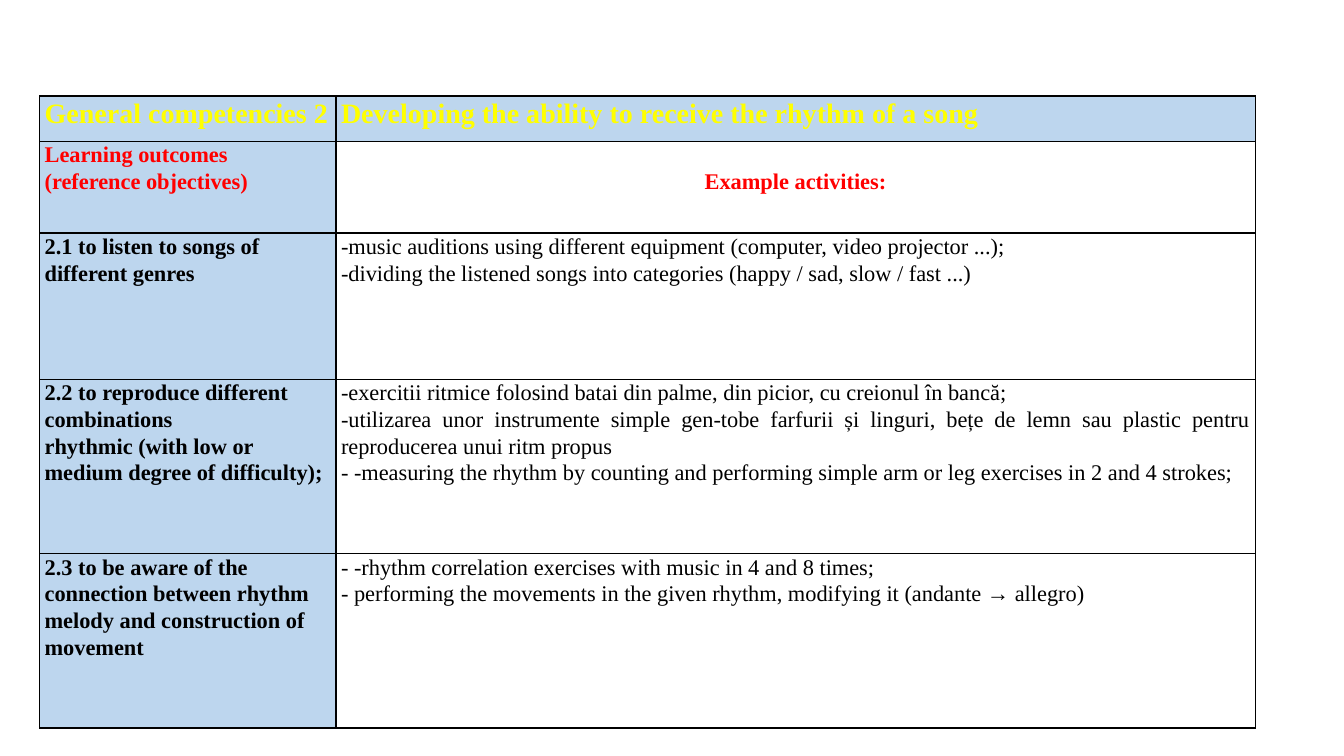
"""Build the slide with the table of rhythm competencies and example activities."""
from dataclasses import dataclass

from lxml import etree
from pptx import Presentation
from pptx import util as u
from pptx.dml.color import RGBColor
from pptx.enum import text
from pptx.oxml import ns
from pptx.table import Table, _Cell

LEFT, JUSTIFY, CENTER = text.PP_ALIGN.LEFT, text.PP_ALIGN.JUSTIFY, text.PP_ALIGN.CENTER


@dataclass(frozen=True)
class Theme:
    font: str = "Times New Roman"
    black: str = "000000"
    yellow: str = "FFFF00"
    red: str = "FF0000"
    label_fill: str = "BDD6EE"
    head_size: float = 20
    body_size: float = 16
    line_spacing: float = 1.07
    border: float = 1
    inset: float = 3.6


THEME = Theme()


@dataclass(frozen=True)
class Entry:
    lines: tuple[str, ...]
    color: str = THEME.black
    size: float = THEME.body_size
    bold: bool = False
    align: text.PP_ALIGN = JUSTIFY
    fill: str | None = None
    top: float = 0


@dataclass(frozen=True)
class Row:
    height: float
    entries: tuple[Entry, Entry]


def label(*lines: str, color: str = THEME.black, size: float = THEME.body_size) -> Entry:
    return Entry(lines, color, size, True, LEFT, THEME.label_fill)


def activities(*lines: str) -> Entry:
    return Entry(lines)


COLUMNS = (211.7, 656.6)
LEFT_EDGE, TOP_EDGE = 28.3, 68.6
HEAD = {"color": THEME.yellow, "size": THEME.head_size}
ROWS = (
    Row(32.3, (
        label("General competencies 2", **HEAD),
        label("Developing the ability to receive the rhythm of a song", **HEAD),
    )),
    Row(65.6, (
        label("Learning outcomes", "(reference objectives)", color=THEME.red),
        Entry(("Example activities:",), THEME.red, bold=True, align=CENTER, top=19),
    )),
    Row(104.4, (
        label("2.1 to listen to songs of different genres"),
        activities(
            "-music auditions using different equipment (computer, video projector ...);",
            "-dividing the listened songs into categories (happy / sad, slow / fast ...)",
        ),
    )),
    Row(124.6, (
        label("2.2 to reproduce different combinations",
              "rhythmic (with low or medium degree of difficulty);"),
        activities(
            "-exercitii ritmice folosind batai din palme, din picior, cu creionul în bancă;",
            "-utilizarea unor instrumente simple gen-tobe farfurii și linguri, "
            "bețe de lemn sau plastic pentru reproducerea unui ritm propus",
            "- -measuring the rhythm by counting and performing simple arm or leg "
            "exercises in 2 and 4 strokes;",
        ),
    )),
    Row(124.6, (
        label("2.3 to be aware of the connection between rhythm",
              "melody and construction of movement"),
        activities(
            "- -rhythm correlation exercises with music in 4 and 8 times;",
            "- performing the movements in the given rhythm, modifying it (andante → allegro)",
        ),
    )),
)


def set_all(target: object, values: dict[str, object]) -> None:
    for name, value in values.items():
        setattr(target, name, value)


def add_borders(cell: _Cell) -> None:
    pr = cell._tc.get_or_add_tcPr()
    for side in ("a:lnL", "a:lnR", "a:lnT", "a:lnB"):
        ln = etree.SubElement(pr, ns.qn(side), w=str(u.Pt(THEME.border)))
        fill = etree.SubElement(ln, ns.qn("a:solidFill"))
        etree.SubElement(fill, ns.qn("a:srgbClr"), val=THEME.black)


def fill_cell(cell: _Cell, entry: Entry) -> None:
    add_borders(cell)
    if entry.fill:
        cell.fill.solid()
        cell.fill.fore_color.rgb = RGBColor.from_string(entry.fill)
    else:
        cell.fill.background()
    set_all(cell, {
        "margin_left": u.Pt(THEME.inset), "margin_right": u.Pt(THEME.inset),
        "margin_top": u.Pt(entry.top), "margin_bottom": 0,
        "vertical_anchor": text.MSO_ANCHOR.TOP,
    })
    tf = cell.text_frame
    tf.text = "\n".join(entry.lines)
    for p in tf.paragraphs:
        set_all(p, {"alignment": entry.align, "line_spacing": THEME.line_spacing})
        for r in p.runs:
            set_all(r.font, {"name": THEME.font, "size": u.Pt(entry.size), "bold": entry.bold})
            r.font.color.rgb = RGBColor.from_string(entry.color)


def fill_table(table: Table, rows: tuple[Row, ...]) -> None:
    set_all(table, {"first_row": False, "horz_banding": False})
    for column, width in zip(table.columns, COLUMNS):
        column.width = u.Pt(width)
    for table_row, row in zip(table.rows, rows):
        table_row.height = u.Pt(row.height)
        for cell, entry in zip(table_row.cells, row.entries):
            fill_cell(cell, entry)


def main() -> None:
    prs = Presentation()
    set_all(prs, {"slide_width": u.Pt(960), "slide_height": u.Pt(540)})
    s = prs.slides.add_slide(prs.slide_layouts.get_by_name("Blank"))
    frame = s.shapes.add_table(
        len(ROWS), len(COLUMNS), u.Pt(LEFT_EDGE), u.Pt(TOP_EDGE),
        u.Pt(sum(COLUMNS)), u.Pt(sum(row.height for row in ROWS)),
    )
    fill_table(frame.table, ROWS)
    prs.save("out.pptx")


if __name__ == "__main__":
    main()
